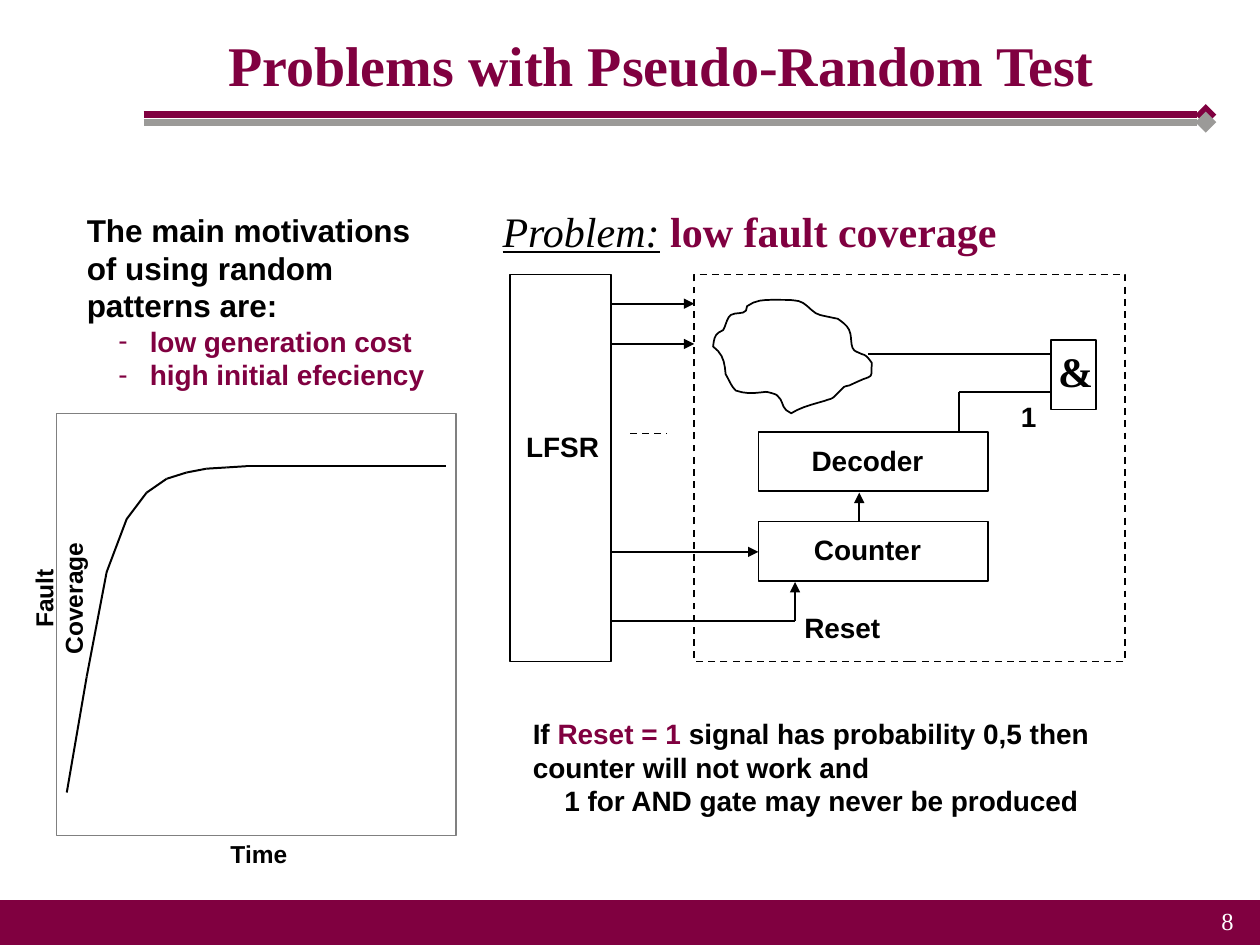
from itertools import pairwise
from lxml import etree
from pptx import Presentation
from pptx.dml.color import RGBColor
from pptx.enum.dml import MSO_LINE
from pptx.enum.shapes import MSO_CONNECTOR, MSO_SHAPE
from pptx.enum.text import MSO_ANCHOR, PP_ALIGN
from pptx.oxml.ns import qn
from pptx.util import Inches, Pt

RECT, LINE = MSO_SHAPE.RECTANGLE, MSO_CONNECTOR.STRAIGHT
DASH, TOP, MIDDLE = MSO_LINE.DASH, MSO_ANCHOR.TOP, MSO_ANCHOR.MIDDLE
LEFT, MID, RIGHT = PP_ALIGN.LEFT, PP_ALIGN.CENTER, PP_ALIGN.RIGHT
WINE, GREY, BLACK, WHITE = "800040", "9B9A98", "000000", "FFFFFF"
SANS, SERIF = "Arial", "Times New Roman"

RULES = [(0.91, WINE), (0.97, GREY)]
BOXES = [
    (5.51, 2.18, 3.42, 3.07, DASH),
    (6.02, 4.14, 1.82, 0.47, None),
    (6.02, 3.43, 1.82, 0.47, None),
    (8.34, 2.7, 0.36, 0.55, None),
    (4.05, 2.18, 0.8, 3.07, None),
]
WIRES = [
    (7.61, 3.11, 8.34, 3.11), (7.61, 3.11, 7.61, 3.44),
    (6.89, 2.81, 8.34, 2.81), (4.85, 4.93, 6.31, 4.93),
]
ARROWS = [
    (6.82, 4.14, 6.82, 3.91), (4.85, 4.38, 6.02, 4.38),
    (4.85, 2.41, 5.51, 2.41), (4.85, 2.73, 5.51, 2.73),
    (6.31, 4.93, 6.31, 4.62),
]
LABELS = [
    ("Counter", 6.16, 4.18, 1.45), ("Decoder", 6.16, 3.47, 1.45),
    ("LFSR", 3.74, 3.36, 1.45), ("Reset", 5.96, 4.8, 1.45),
    ("1", 7.91, 3.12, 0.51),
]
START = (5.93, 2.43)
CLOUD = [
    (6.01, 2.37, 6.1, 2.38, 6.2, 2.38), (6.25, 2.38, 6.29, 2.38, 6.34, 2.39),
    (6.4, 2.4, 6.45, 2.49, 6.51, 2.5), (6.55, 2.51, 6.6, 2.52, 6.65, 2.53),
    (6.69, 2.56, 6.74, 2.59, 6.75, 2.65), (6.76, 2.69, 6.75, 2.75, 6.78, 2.78),
    (6.79, 2.79, 6.82, 2.8, 6.84, 2.81), (6.88, 2.82, 6.89, 2.84, 6.92, 2.88),
    (6.91, 2.99, 6.94, 2.98, 6.85, 3.01), (6.85, 3.01, 6.76, 3.05, 6.74, 3.06),
    (6.73, 3.06, 6.7, 3.07, 6.7, 3.07), (6.67, 3.1, 6.65, 3.12, 6.62, 3.15),
    (6.6, 3.17, 6.57, 3.17, 6.55, 3.18), (6.45, 3.21, 6.36, 3.23, 6.28, 3.28),
    (6.19, 3.24, 6.23, 3.19, 6.17, 3.14), (6.17, 3.13, 6.09, 3.11, 6.08, 3.11),
    (5.99, 3.12, 5.93, 3.13, 5.84, 3.1), (5.8, 3.06, 5.79, 3.02, 5.76, 2.97),
    (5.75, 2.87, 5.74, 2.81, 5.66, 2.75), (5.67, 2.68, 5.67, 2.65, 5.74, 2.62),
    (5.76, 2.59, 5.77, 2.52, 5.8, 2.5), (5.85, 2.47, 5.93, 2.51, 5.93, 2.43),
]
CURVE = [6.29, 5.37, 4.54, 4.12, 3.91, 3.8, 3.75, 3.72, 3.71] + [3.7] * 11
CURVE_LEFT, CURVE_RIGHT = 0.53, 3.54

PROBLEM = [[("Problem:", BLACK), (" ", BLACK), ("low fault coverage", WINE)]]
RESET = [
    [("If ", BLACK), ("Reset = 1 ", WINE),
     ("signal has probability 0,5 then counter will not work and", BLACK)],
    [("1 for AND gate may never be produced", BLACK)],
]
MOTIVES = [
    [("The main motivations of using random patterns are:", BLACK)],
    [("low generation cost", WINE)],
    [("high initial efeciency", WINE)],
]

deck = Presentation()
deck.slide_width, deck.slide_height = Inches(10), Inches(7.5)
slide = deck.slides.add_slide(deck.slide_layouts[6])
shapes = slide.shapes


def rgb(code):
    return RGBColor.from_string(code)


def paint(shape, fill, color=BLACK, width=1, dash=None):
    shape.shadow.inherit = False
    if fill:
        shape.fill.solid()
        shape.fill.fore_color.rgb = rgb(fill)
    else:
        shape.fill.background()
    shape.line.color.rgb = rgb(color)
    shape.line.width = Pt(width)
    if dash:
        shape.line.dash_style = dash


def box(x, y, w, h, fill=WHITE, **style):
    shape = shapes.add_shape(RECT, *map(Inches, (x, y, w, h)))
    paint(shape, fill, **style)


def wire(x1, y1, x2, y2, color=BLACK, width=1, tail=None, dash=None):
    line = shapes.add_connector(LINE, *map(Inches, (x1, y1, x2, y2)))
    line.line.color.rgb = rgb(color)
    line.line.width = Pt(width)
    if dash:
        line.line.dash_style = dash
    if tail:
        ln = line.line._get_or_add_ln()
        etree.SubElement(ln, qn("a:tailEnd"), type=tail)
    etree.SubElement(line._element.spPr, qn("a:effectLst"))


def write(paras, x, y, w, h, size=16, font=SANS, bold=True, align=MID,
          anchor=TOP, tight=False):
    shape = shapes.add_textbox(*map(Inches, (x, y, w, h)))
    frame = shape.text_frame
    frame.word_wrap = not tight
    frame.vertical_anchor = anchor
    if tight:
        frame.margin_left = frame.margin_right = 0
        frame.margin_top = frame.margin_bottom = 0
    for i, parts in enumerate(paras):
        para = frame.paragraphs[0] if i == 0 else frame.add_paragraph()
        para.alignment = align
        for text, color in parts:
            run = para.add_run()
            run.text = text
            run.font.size, run.font.name = Pt(size), font
            run.font.bold = bold
            run.font.color.rgb = rgb(color)
    return shape


def indent(para, left, first=0):
    props = para._p.get_or_add_pPr()
    props.set("marL", str(Inches(left)))
    props.set("indent", str(Inches(first)))
    return props


def trace(start, curves, steps=5):
    x0, y0 = start
    for x1, y1, x2, y2, x3, y3 in curves:
        for i in range(1, steps + 1):
            t = i / steps
            u = 1 - t
            a, b, c, d = u**3, 3 * u * u * t, 3 * u * t * t, t**3
            yield (a * x0 + b * x1 + c * x2 + d * x3,
                   a * y0 + b * y1 + c * y2 + d * y3)
        x0, y0 = x3, y3


for y, color in RULES:
    wire(1.14, y, 9.57, y, color, 4, "diamond")
box(0, 7.15, 10, 0.36, WINE, color=WINE, width=0.75)
write([[("8", WHITE)]], 8.62, 7.14, 1.27, 0.52, 14, SERIF, False, RIGHT)
write([[("Problems with Pseudo-Random Test", WINE)]],
      0.75, 0, 9, 1.01, 32, SERIF, anchor=MIDDLE)

head = write(PROBLEM, 3.89, 1.58, 4.58, 0.51, 24, SERIF, align=LEFT)
word = head.text_frame.paragraphs[0].runs[0].font
word.bold, word.italic, word.underline = False, True, True

for x, y, w, h, dash in BOXES:
    box(x, y, w, h, dash=dash)
pen = shapes.build_freeform(*map(Inches, START))
rim = [(Inches(x), Inches(y)) for x, y in trace(START, CLOUD)]
pen.add_line_segments(rim, close=True)
paint(pen.convert_to_shape(), WHITE)
for ends in WIRES:
    wire(*ends)
for ends in ARROWS:
    wire(*ends, tail="triangle")
wire(5, 3.44, 5.29, 3.44, dash=DASH)
for text, x, y, w in LABELS:
    write([[(text, BLACK)]], x, y, w, 0.37)
write([[("&", BLACK)]], 8.3, 2.69, 0.44, 0.5, 24, SERIF)

note = write(RESET, 4.13, 5.64, 4.72, 0.9, align=LEFT)
indent(note.text_frame.paragraphs[1], 0.25)

goals = write(MOTIVES, 0.59, 1.62, 2.99, 1.54, align=LEFT, anchor=MIDDLE)
first, *items = goals.text_frame.paragraphs
first.runs[0].font.size = Pt(18)
for para in items:
    props = indent(para, 0.5, -0.25)
    tint = etree.SubElement(props, qn("a:buClr"))
    etree.SubElement(tint, qn("a:srgbClr"), val=WINE)
    etree.SubElement(props, qn("a:buFont"), typeface=SANS)
    etree.SubElement(props, qn("a:buChar"), char="-")
    etree.SubElement(para._p, qn("a:endParaRPr"), sz="1600", b="1")

box(0.45, 3.28, 3.17, 3.35, None, color="808080", width=0.63)
step = (CURVE_RIGHT - CURVE_LEFT) / (len(CURVE) - 1)
spots = [(CURVE_LEFT + i * step, y) for i, y in enumerate(CURVE)]
for start, end in pairwise(spots):
    wire(*start, *end, width=1.13)
write([[("Time", BLACK)]], 1.75, 6.66, 0.61, 0.23, 14, tight=True)
axis = write([[("Fault", BLACK)], [("Coverage", BLACK)]],
             -0.24, 4.52, 1.4, 0.46, 14, tight=True)
axis.rotation = 270

deck.save("out.pptx")
